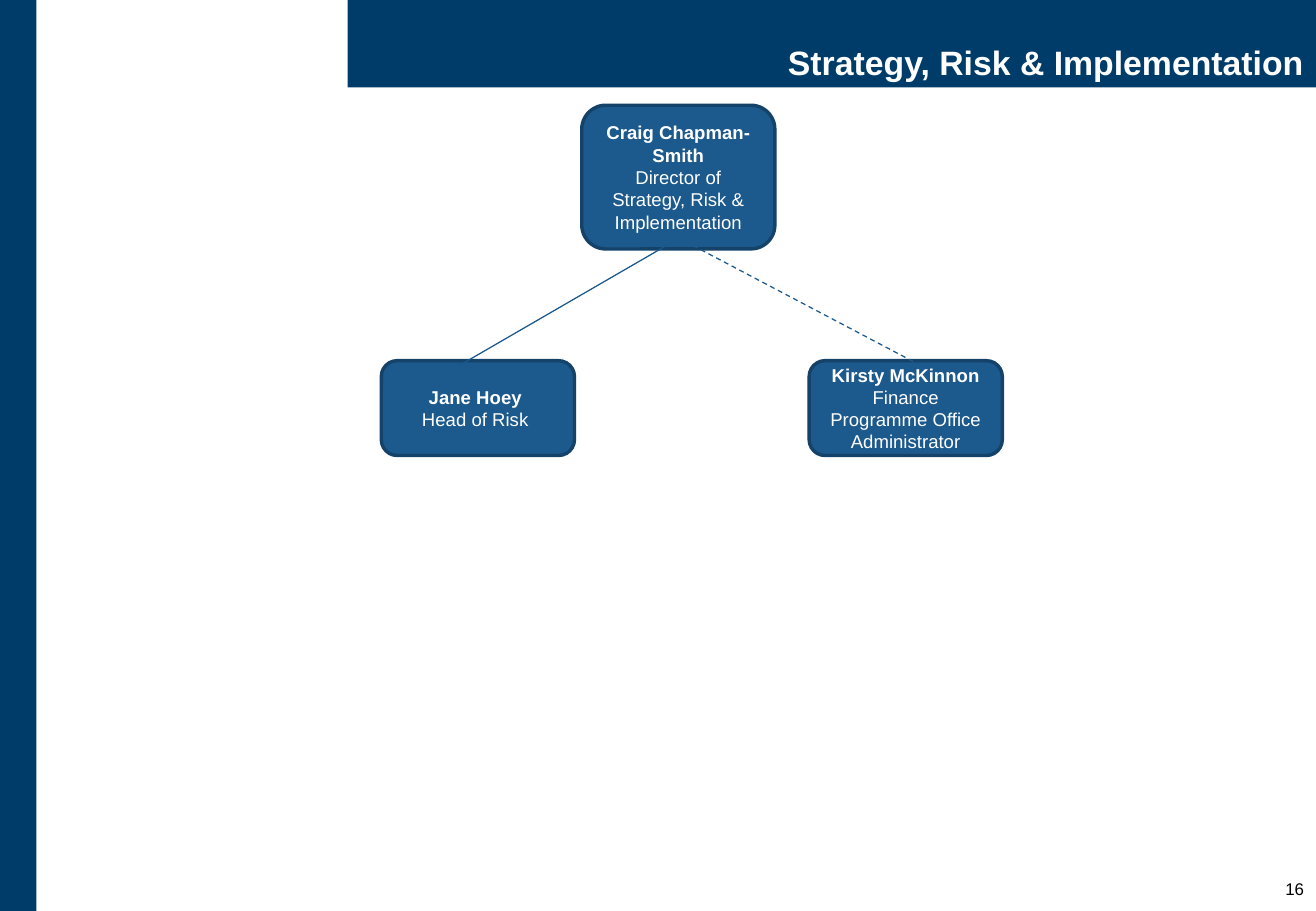
"""Build the Strategy, Risk & Implementation team chart slide."""
from pptx import Presentation
from pptx.dml.color import RGBColor
from pptx.enum.dml import MSO_LINE
from pptx.enum.shapes import MSO_CONNECTOR, MSO_SHAPE
from pptx.enum.text import MSO_ANCHOR, PP_ALIGN
from pptx.oxml.ns import qn
from pptx.util import Pt

RECT, ROUND = MSO_SHAPE.RECTANGLE, MSO_SHAPE.ROUNDED_RECTANGLE
STRAIGHT, DASH = MSO_CONNECTOR.STRAIGHT, MSO_LINE.DASH
TOP, MIDDLE, BOTTOM = MSO_ANCHOR.TOP, MSO_ANCHOR.MIDDLE, MSO_ANCHOR.BOTTOM
CENTER, RIGHT = PP_ALIGN.CENTER, PP_ALIGN.RIGHT

WIDTH, HEIGHT = 780, 540
CARD_W = 114.5


def color(code):
    return RGBColor.from_string(code)


def write(frame, text, size=11, ink="FFFFFF", bold=False, align=CENTER, space=1.0):
    para = frame.paragraphs[0]
    if para.runs:
        para = frame.add_paragraph()
    para.alignment = align
    para.line_spacing = space
    run = para.add_run()
    run.text = text
    font = run.font
    font.name, font.size, font.bold = "Arial", Pt(size), bold
    font.color.rgb = color(ink)


class Chart:
    navy, blue, edge = "003C69", "1C598C", "154268"

    def __init__(self, slide):
        self.shapes = slide.shapes

    def setup(self, frame, anchor, inset=(7.2, 3.6, 7.2, 3.6)):
        frame.word_wrap = True
        frame.vertical_anchor = anchor
        left, top, right, bottom = map(Pt, inset)
        frame.margin_left, frame.margin_top = left, top
        frame.margin_right, frame.margin_bottom = right, bottom
        return frame

    def block(self, box, kind=RECT, fill=navy, line=None):
        shape = self.shapes.add_shape(kind, *map(Pt, box))
        shape.shadow.inherit = False
        shape.fill.solid()
        shape.fill.fore_color.rgb = color(fill)
        if line:
            shape.line.color.rgb = color(line)
            shape.line.width = Pt(2)
        else:
            shape.line.fill.background()
        return shape

    def title(self, text, box):
        frame = self.setup(self.block(box).text_frame, BOTTOM, (5.76, 2.88, 7.2, 2.88))
        write(frame, text, size=20, bold=True, align=RIGHT, space=0.9)

    def label(self, text, box):
        frame = self.setup(self.shapes.add_textbox(*map(Pt, box)).text_frame, TOP)
        write(frame, text, size=10, ink="000000", align=RIGHT)

    def card(self, name, role, left, top, height):
        shape = self.block((left, top, CARD_W, height), ROUND, self.blue, self.edge)
        frame = self.setup(shape.text_frame, MIDDLE)
        write(frame, name, bold=True)
        write(frame, role)

    def link(self, start, end, ink=blue, dash=None):
        line = self.shapes.add_connector(STRAIGHT, *map(Pt, start + end))
        line.line.color.rgb = color(ink)
        line.line.width = Pt(0.75)
        if dash:
            line.line.dash_style = dash
        props = line._element.spPr
        props.append(props.makeelement(qn("a:effectLst"), {}))


def main():
    deck = Presentation()
    deck.slide_width, deck.slide_height = Pt(WIDTH), Pt(HEIGHT)
    chart = Chart(deck.slides.add_slide(deck.slide_layouts[6]))

    chart.block((0, 0, 21.6, HEIGHT))
    chart.title("Strategy, Risk & Implementation", (206, 0, WIDTH - 206, 51.8))
    chart.label("16", (717.4, 517.5, 62.6, 22.5))

    chart.card("Craig Chapman-Smith", "Director of Strategy, Risk & Implementation",
               344.8, 62.4, 85.2)
    team = [("Jane Hoey ", "Head of Risk ", 226),
            ("Kirsty McKinnon", "Finance Programme Office Administrator", 479.6)]
    for name, role, left in team:
        chart.card(name, role, left, 213.8, 56.2)

    chart.link((395.3, 145.4), (272.2, 216.7), "19578C")
    chart.link((545.8, 216.7), (410.4, 145.4), dash=DASH)
    deck.save("out.pptx")


if __name__ == "__main__":
    main()
